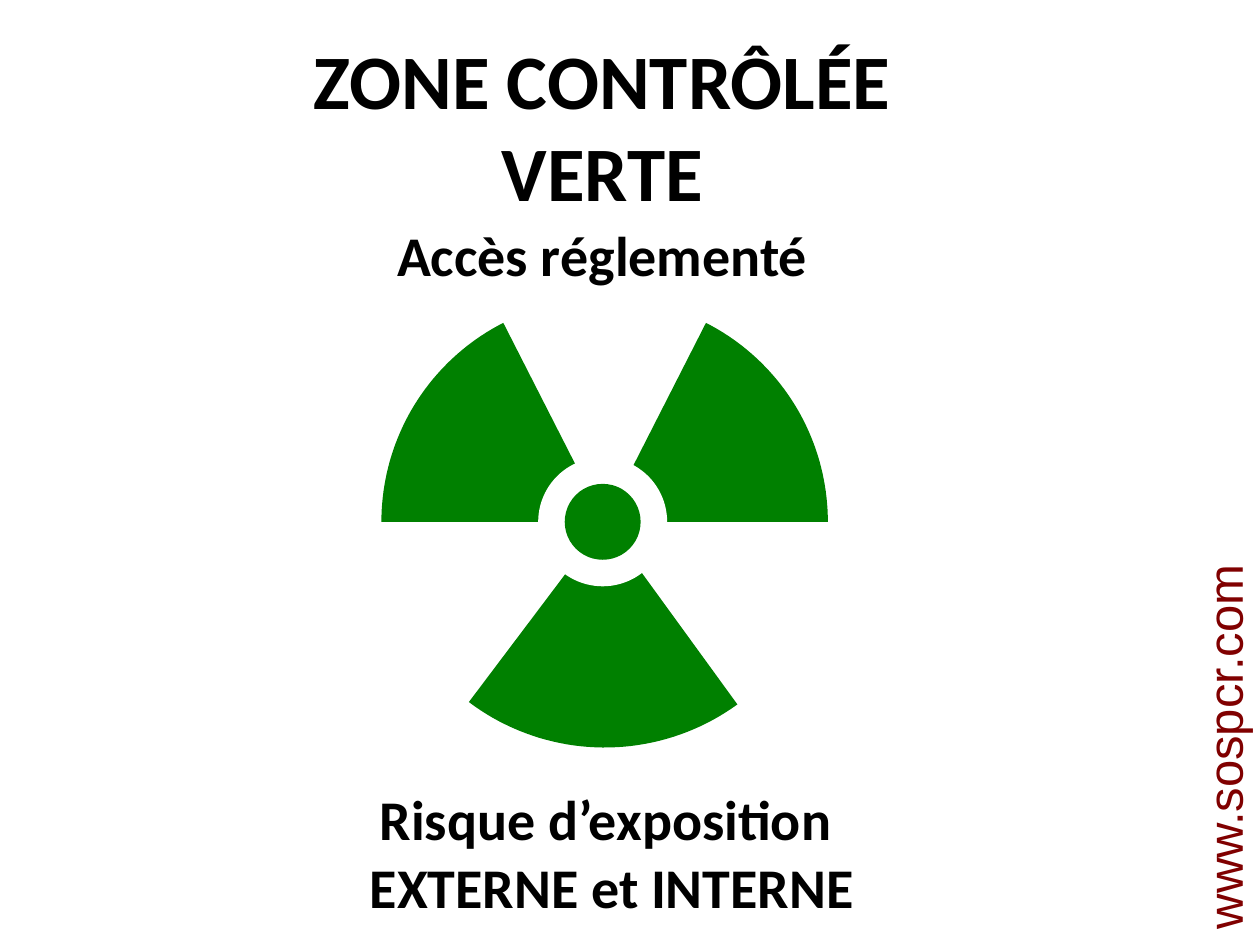
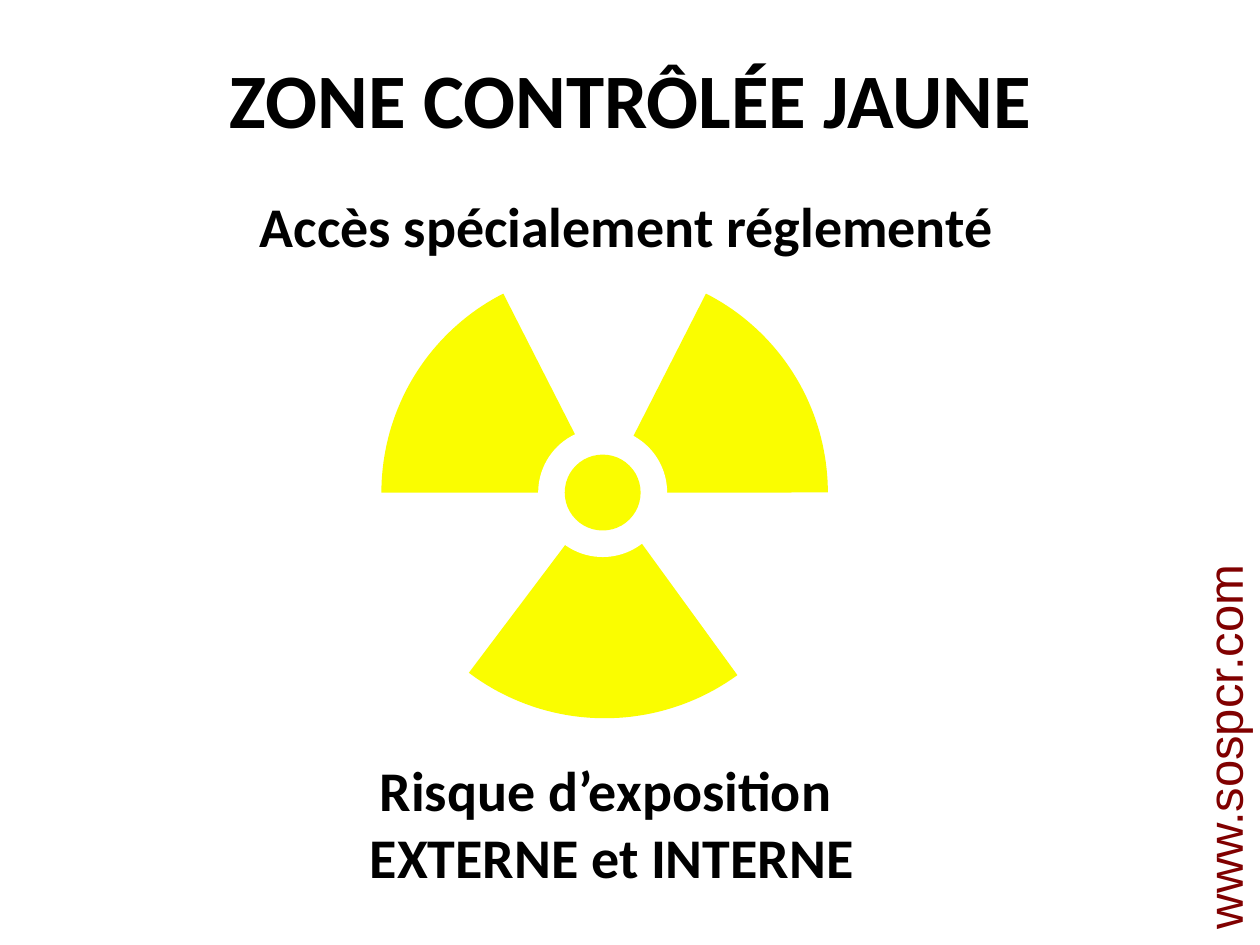
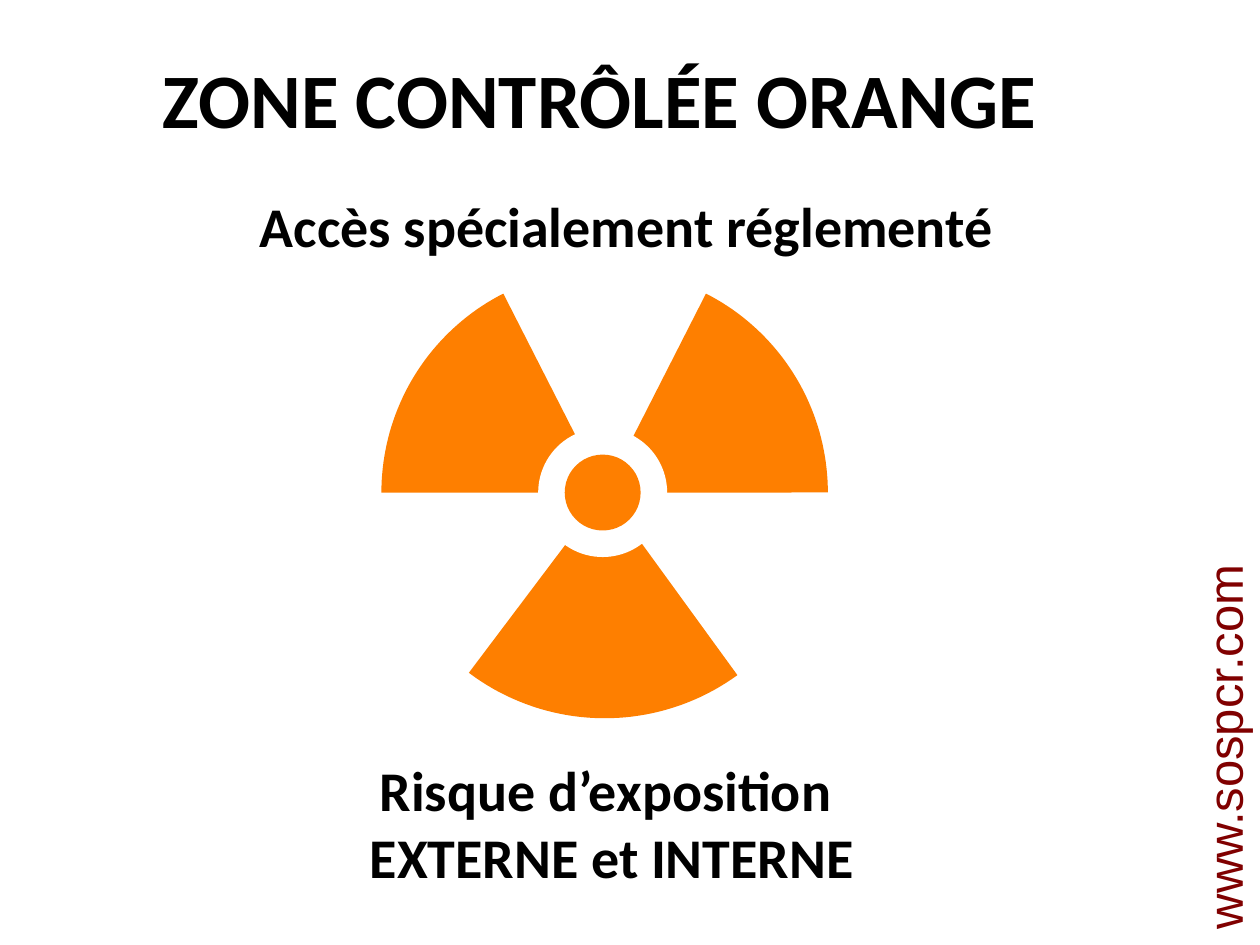
import math

from pptx import Presentation
from pptx import util as u
from pptx.dml.color import RGBColor
from pptx.enum import shapes, text

COLORS = {
    "paper": "FFFFFF",
    "ink": "000000",
    "footer": "800000",
    "green": "008000",
    "yellow": "FAFD00",
    "orange": "FE7F00",
}
CENTER_X = 12.19
HUB_X = 12.15
# Start angle, end angle (degrees, clockwise from the right) and radius in cm
BLADES = [(180, 243, 4.5), (54, 127, 4.55), (297, 360, 4.5)]
ARC_STEPS = 40

# Zone signs: title lines and frame, access line and frame, symbol height
ZONES = [
    {"color": "green", "title": ["ZONE CONTRÔLÉE", "VERTE"],
     "title_at": (3.51, 0.53, 17.27, 4.01), "access": "Accès réglementé",
     "access_x": (7.7, 8.89), "center_y": 10.52},
    {"color": "yellow", "title": ["ZONE CONTRÔLÉE JAUNE"],
     "title_at": (4.09, 0.91, 17.27, 2.13), "access": "Accès spécialement réglementé",
     "access_x": (4.9, 15.47), "center_y": 9.93},
    {"color": "orange", "title": ["ZONE CONTRÔLÉE ORANGE"],
     "title_at": (2.9, 0.91, 18.39, 2.13), "access": "Accès spécialement réglementé",
     "access_x": (4.9, 15.47), "center_y": 9.93},
]


def rgb(name):
    return RGBColor.from_string(COLORS[name])


def write(frame, lines, size=32, font="Calibri", color="ink", bold=True):
    """Fill a text frame with one centred paragraph per line."""
    for index, line in enumerate(lines):
        para = frame.paragraphs[0] if index == 0 else frame.add_paragraph()
        para.alignment = text.PP_ALIGN.CENTER
        span = para.add_run()
        span.text = line
        span.font.size = u.Pt(size)
        span.font.name = font
        span.font.bold = bold
        span.font.color.rgb = rgb(color)


class SignDeck:
    def __init__(self):
        self.deck = Presentation()
        self.deck.slide_width = u.Cm(25.4)
        self.deck.slide_height = u.Cm(19.05)
        self.page = None

    def new_page(self):
        self.page = self.deck.slides.add_slide(self.deck.slide_layouts[6])
        self.page.background.fill.solid()
        self.page.background.fill.fore_color.rgb = rgb("paper")
        footer = self.text_box((20.68, 14.33, 7.98, 1.45), ["www.sospcr.com"],
                               size=28, font="Arial", color="footer", bold=False)
        footer.rotation = 270

    def text_box(self, place, lines, wrap=False, **style):
        box = self.page.shapes.add_textbox(*map(u.Cm, place))
        box.text_frame.word_wrap = wrap
        box.text_frame.auto_size = text.MSO_AUTO_SIZE.SHAPE_TO_FIT_TEXT
        write(box.text_frame, lines, **style)
        return box

    def paint(self, shape, color):
        shape.shadow.inherit = False
        shape.fill.solid()
        shape.fill.fore_color.rgb = rgb(color)
        shape.line.fill.background()

    def blade(self, group, center_y, start, end, radius, color):
        angles = [math.radians(start + (end - start) * step / ARC_STEPS)
                  for step in range(ARC_STEPS + 1)]
        arc = [(u.Cm(CENTER_X + radius * math.cos(angle)),
                u.Cm(center_y + radius * math.sin(angle))) for angle in angles]
        outline = group.shapes.build_freeform(u.Cm(CENTER_X), u.Cm(center_y))
        outline.add_line_segments(arc, close=True)
        self.paint(outline.convert_to_shape(), color)

    def disc(self, group, center_y, diameter, color):
        left, top = HUB_X - diameter / 2, center_y - diameter / 2
        disc = group.shapes.add_shape(shapes.MSO_SHAPE.OVAL, u.Cm(left), u.Cm(top),
                                      u.Cm(diameter), u.Cm(diameter))
        self.paint(disc, color)

    def trefoil(self, center_y, color):
        group = self.page.shapes.add_group_shape()
        for start, end, radius in BLADES:
            self.blade(group, center_y, start, end, radius, color)
        self.disc(group, center_y, 2.6, "paper")
        self.disc(group, center_y, 1.53, color)


def main():
    signs = SignDeck()
    for zone in ZONES:
        center_y = zone["center_y"]
        access_left, access_width = zone["access_x"]
        signs.new_page()
        # Warning symbol
        signs.trefoil(center_y, zone["color"])
        # Wording above and below the symbol
        signs.text_box(zone["title_at"], zone["title"], wrap=True, size=44)
        signs.text_box((access_left, center_y - 6.2, access_width, 1.63), [zone["access"]])
        signs.text_box((7.16, center_y + 5.18, 10.36, 3),
                       ["Risque d’exposition ", "EXTERNE et INTERNE"])
    signs.deck.save("out.pptx")


if __name__ == "__main__":
    main()
